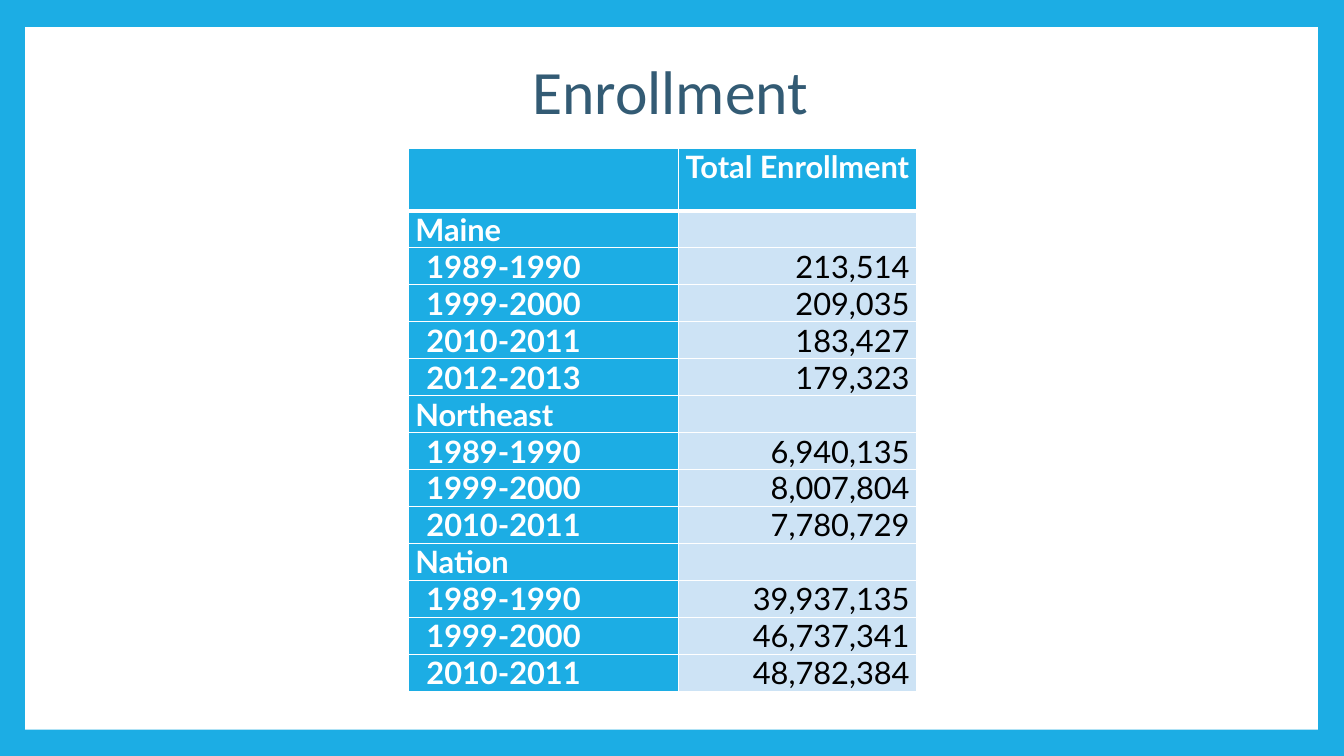
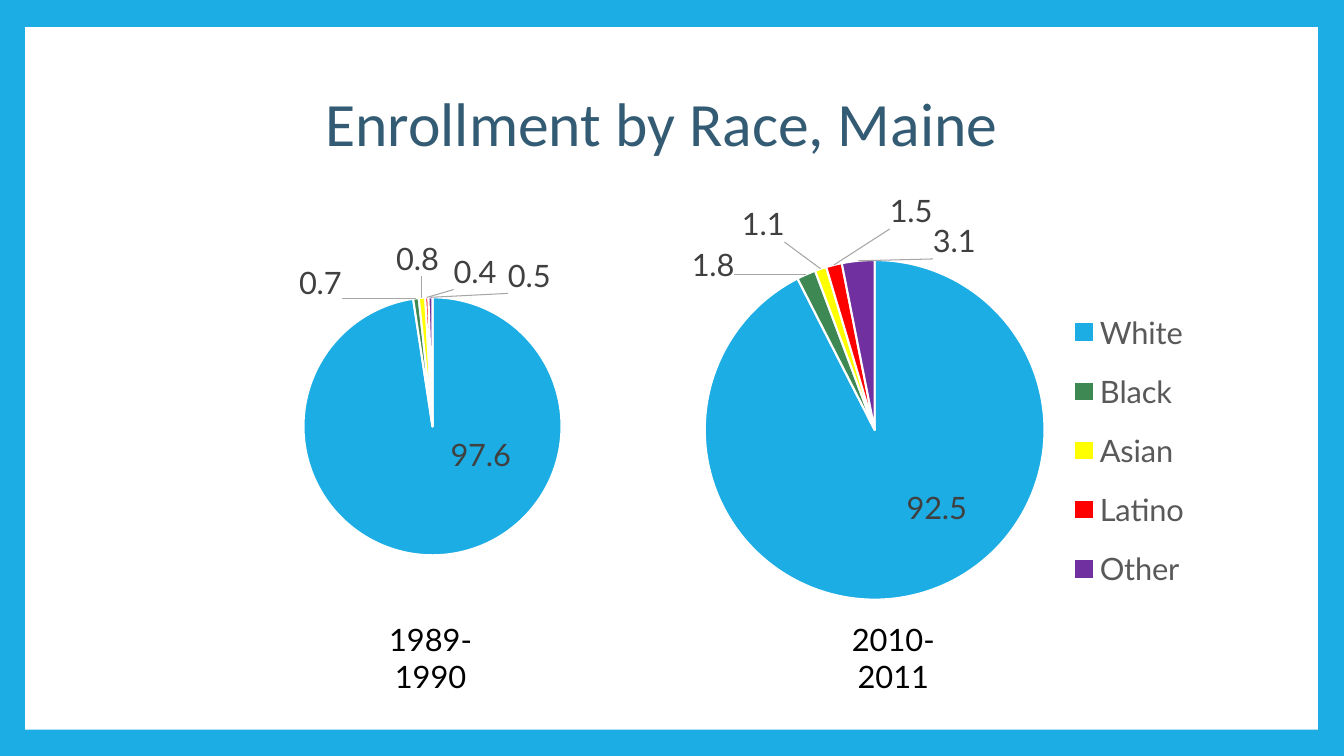
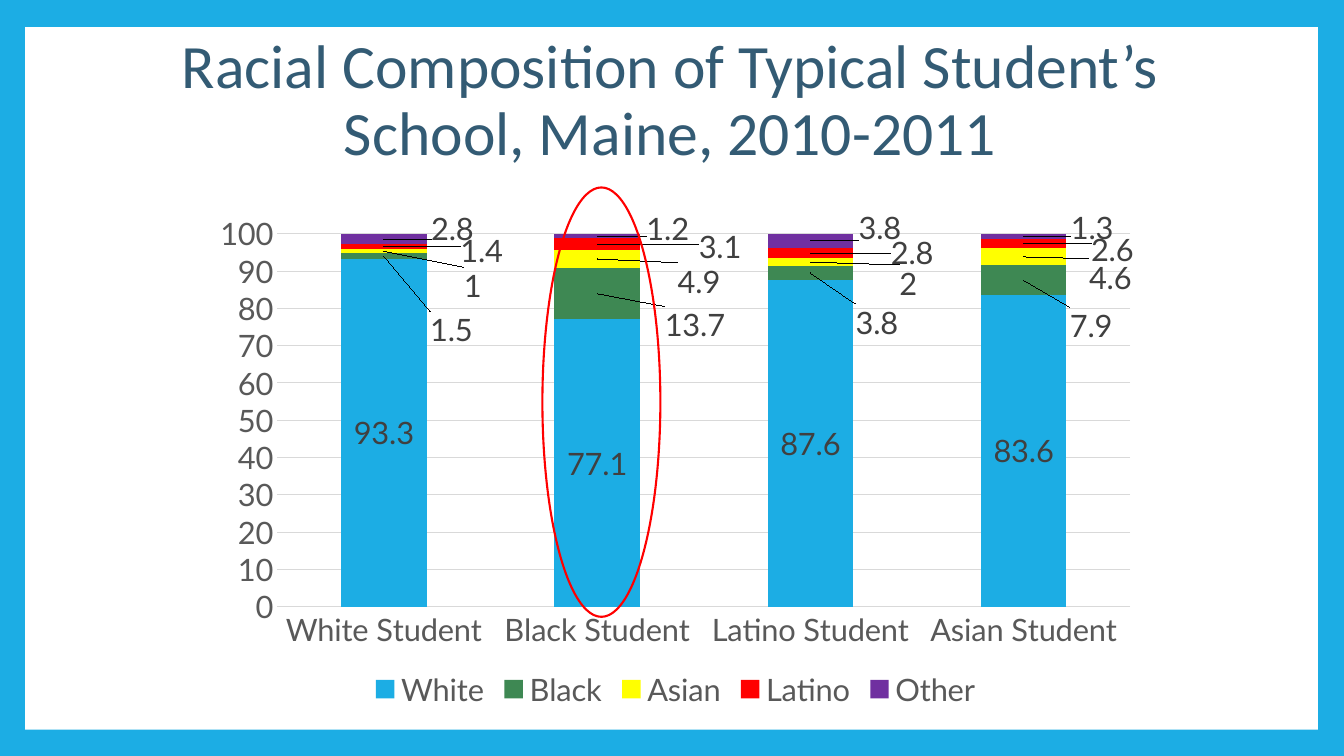
from pptx import Presentation
from pptx.chart.data import CategoryChartData
from pptx.dml.color import RGBColor
from pptx.enum.chart import XL_CHART_TYPE, XL_LABEL_POSITION, XL_LEGEND_POSITION, XL_TICK_MARK
from pptx.enum.shapes import MSO_SHAPE
from pptx.enum.text import MSO_ANCHOR, PP_ALIGN
from pptx.oxml import parse_xml
from pptx.oxml.ns import nsdecls, qn
from pptx.util import Inches, Pt

PIE, STACKED = XL_CHART_TYPE.PIE, XL_CHART_TYPE.COLUMN_STACKED
LABEL_CENTER, LABEL_OUTSIDE = XL_LABEL_POSITION.CENTER, XL_LABEL_POSITION.OUTSIDE_END
LEGEND_RIGHT, LEGEND_BOTTOM = XL_LEGEND_POSITION.RIGHT, XL_LEGEND_POSITION.BOTTOM
NO_TICK = XL_TICK_MARK.NONE
RECTANGLE, OVAL = MSO_SHAPE.RECTANGLE, MSO_SHAPE.OVAL
TOP, MIDDLE, BOTTOM = MSO_ANCHOR.TOP, MSO_ANCHOR.MIDDLE, MSO_ANCHOR.BOTTOM
LEFT, CENTER, RIGHT = PP_ALIGN.LEFT, PP_ALIGN.CENTER, PP_ALIGN.RIGHT

# Shared style
BLUE, PALE, NAVY = "1CADE4", "CDE3F5", "335B74"
WHITE, BLACK, RED = "FFFFFF", "000000", "FF0000"
LABEL_GREY, AXIS_GREY, GRID_GREY, LEADER_GREY = "404040", "595959", "D9D9D9", "A6A6A6"
TITLE_FONT, BODY_FONT, TITLE_SIZE, BODY_SIZE = "Calibri", "Lato", 44, 22
RACE_COLORS = {"White": BLUE, "Black": "3E8853", "Asian": "FFFF00",
               "Latino": RED, "Other": "7030A0"}

# Content
ENROLLMENT = {
    "Maine": [("1989-1990", "213,514"), ("1999-2000", "209,035"),
              ("2010-2011", "183,427"), ("2012-2013", "179,323")],
    "Northeast": [("1989-1990", "6,940,135"), ("1999-2000", "8,007,804"),
                  ("2010-2011", "7,780,729")],
    "Nation": [("1989-1990", "39,937,135"), ("1999-2000", "46,737,341"),
               ("2010-2011", "48,782,384")],
}
STUDENTS = ["White Student", "Black Student", "Latino Student", "Asian Student"]
# Race: values, then how far each label is moved from its usual place, in inches
COMPOSITION = {
    "White": ([93.3, 77.1, 87.6, 83.6], []),
    "Black": ([1.5, 13.7, 3.8, 7.9], [(0.67, 0.73), (0.97, 0.31), (0.66, 0.49), (0.67, 0.45)]),
    "Asian": ([1, 4.9, 2, 4.6], [(0.88, 0.34), (1.01, 0.22), (0.97, 0.21), (0.86, 0.2)]),
    "Latino": ([1.4, 3.1, 2.8, 2.6], [(0.97, 0.04), (1.22, 0.02), (1.01, -0.01), (0.88, 0.06)]),
    "Other": ([2.8, 1.2, 3.8, 1.3], [(0.68, -0.11), (0.7, -0.08), (0.69, -0.13), (0.68, -0.09)]),
}


def color(value):
    return RGBColor.from_string(value)


def inches(*lengths):
    return [Inches(length) for length in lengths]


def set_font(font, size, name, fill, bold=False):
    font.size, font.name, font.bold = Pt(size), name, bold
    font.color.rgb = color(fill)


def set_line(line, fill, width):
    line.color.rgb = color(fill)
    line.width = Pt(width)


# Frame and text
def add_text(page, text, place, size, font, fill, anchor=TOP, spacing=None):
    frame = page.shapes.add_textbox(*inches(*place)).text_frame
    frame.word_wrap = True
    frame.vertical_anchor = anchor
    para = frame.paragraphs[0]
    para.text, para.alignment, para.line_spacing = text, CENTER, spacing
    set_font(para.font, size, font, fill)


def add_page(deck, title, title_place):
    page = deck.slides.add_slide(deck.slide_layouts[6])
    panel = page.shapes.add_shape(RECTANGLE, *inches(0.25, 0.27, 12.82, 6.97))
    panel.shadow.inherit = False
    panel.fill.solid()
    panel.fill.fore_color.rgb = color(WHITE)
    panel.line.fill.background()
    add_text(page, title, title_place, TITLE_SIZE, TITLE_FONT, NAVY, MIDDLE, 0.9)
    return page


# Table
def fill_cell(cell, text, fill, ink, align, anchor, bold, indent=0, top=1, bottom=1):
    cell.margin_left, cell.margin_right = Inches(0.07 + indent), Inches(0.07)
    cell.margin_top = cell.margin_bottom = 0
    cell.vertical_anchor = anchor
    for side, width in zip("LRTB", (1, 1, top, bottom)):
        cell._tc.get_or_add_tcPr().append(parse_xml(
            f'<a:ln{side} {nsdecls("a")} w="{Pt(width)}"><a:solidFill>'
            f'<a:srgbClr val="{WHITE}"/></a:solidFill></a:ln{side}>'))
    cell.fill.solid()
    cell.fill.fore_color.rgb = color(fill)
    para = cell.text_frame.paragraphs[0]
    para.alignment = align
    if text:
        para.text = text
    set_font(para.font, BODY_SIZE, BODY_FONT, ink, bold)


def add_enrollment_table(page, groups):
    rows = []
    for region, years in groups.items():
        rows.append((region, "", 0))
        rows += [(year, total, 0.11) for year, total in years]
    height = 0.62 + 0.32 * len(rows)
    table = page.shapes.add_table(len(rows) + 1, 2, *inches(4.05, 1.47, 5.04, height)).table
    table.columns[0].width, table.columns[1].width = inches(2.68, 2.36)
    table.rows[0].height = Inches(0.62)
    for column, text in enumerate(("", "Total Enrollment")):
        fill_cell(table.cell(0, column), text, BLUE, WHITE, CENTER, TOP, True, bottom=3)
    for number, (name, total, indent) in enumerate(rows, 1):
        table.rows[number].height = Inches(0.32)
        top = 3 if number == 1 else 1
        fill_cell(table.cell(number, 0), name, BLUE, WHITE, LEFT, BOTTOM, True, indent, top)
        fill_cell(table.cell(number, 1), total, PALE, BLACK, RIGHT, MIDDLE, False, 0, top)


# Charts
def add_layout(parent, index, **values):
    """Give a chart part a manual layout; values are fractions of the chart."""
    for old in parent.findall(qn("c:layout")):
        parent.remove(old)
    tags = "".join(f'<c:{tag} val="{value}"/>' for tag, value in values.items())
    parent.insert(index, parse_xml(
        f'<c:layout {nsdecls("c")}><c:manualLayout>{tags}</c:manualLayout></c:layout>'))


def place_part(parent, index, chart_place, part_place, **extra):
    left, top, width, height = chart_place
    x, y, w, h = part_place
    add_layout(parent, index, **extra, xMode="edge", yMode="edge",
               x=(x - left) / width, y=(y - top) / height, w=w / width, h=h / height)


def add_chart(page, kind, place, plot_place, categories, series):
    data = CategoryChartData()
    data.categories = categories
    for name, values in series.items():
        data.add_series(name, values)
    chart = page.shapes.add_chart(kind, *inches(*place), data).chart
    chart.has_title = chart.has_legend = False
    set_font(chart.font, BODY_SIZE, BODY_FONT, BLACK)
    place_part(chart._chartSpace.chart.plotArea, 0, place, plot_place, layoutTarget="inner")
    return chart


def add_legend(chart, position):
    chart.has_legend = True
    chart.legend.position = position
    chart.legend.include_in_layout = False
    set_font(chart.legend.font, BODY_SIZE, BODY_FONT, AXIS_GREY)


def add_labels(series, place, shifts, positions):
    labels = series.data_labels
    labels.show_value = True
    set_font(labels.font, BODY_SIZE, BODY_FONT, LABEL_GREY)
    for index, position in enumerate(positions):
        label = series.points[index].data_label
        set_font(label.font, BODY_SIZE, BODY_FONT, LABEL_GREY)
        label.position = position
    for element, (x, y) in zip(labels._element.findall(qn("c:dLbl")), shifts):
        add_layout(element, 1, x=x / place[2], y=y / place[3])
    return labels


def add_pie(page, place, circle, categories, values, shifts):
    chart = add_chart(page, PIE, place, circle, categories, {"Series 1": values})
    plot = chart.plots[0]
    plot.vary_by_categories = True
    series = plot.series[0]
    for index, fill in enumerate(RACE_COLORS.values()):
        wedge = series.points[index].format
        wedge.fill.solid()
        wedge.fill.fore_color.rgb = color(fill)
        set_line(wedge.line, WHITE, 1.5)
    positions = [LABEL_CENTER] + [LABEL_OUTSIDE] * (len(values) - 1)
    labels = add_labels(series, place, shifts, positions)
    labels._element.append(parse_xml(
        f'<c:leaderLines {nsdecls("c", "a")}><c:spPr><a:ln w="{Pt(0.75)}"><a:solidFill>'
        f'<a:srgbClr val="{LEADER_GREY}"/></a:solidFill></a:ln></c:spPr></c:leaderLines>'))
    return chart


def add_composition_chart(page):
    place = (2, 2.03, 9.4, 5.05)
    chart = add_chart(page, STACKED, place, (2.75, 2.32, 8.46, 3.7), STUDENTS,
                      {race: values for race, (values, _) in COMPOSITION.items()})
    plot = chart.plots[0]
    plot.gap_width, plot.overlap, plot.vary_by_categories = 150, 100, False
    for series in plot.series:
        series.format.fill.solid()
        series.format.fill.fore_color.rgb = color(RACE_COLORS[series.name])
        shifts = COMPOSITION[series.name][1]
        labels = add_labels(series, place, shifts, [LABEL_CENTER] * len(shifts))
        labels.position = LABEL_CENTER
        for leader in labels._element.findall(qn("c:showLeaderLines")):
            labels._element.remove(leader)
    # Axes
    for axis in (chart.category_axis, chart.value_axis):
        axis.major_tick_mark = axis.minor_tick_mark = NO_TICK
        set_font(axis.tick_labels.font, BODY_SIZE, BODY_FONT, AXIS_GREY)
    set_line(chart.category_axis.format.line, GRID_GREY, 0.75)
    scale = chart.value_axis
    scale.minimum_scale, scale.maximum_scale, scale.major_unit = 0, 100, 10
    scale.format.line.fill.background()
    set_line(scale.major_gridlines.format.line, GRID_GREY, 0.75)
    add_legend(chart, LEGEND_BOTTOM)


# Slides
def build_enrollment(deck):
    page = add_page(deck, "Enrollment", (1.25, 0.2, 10.8, 1.48))
    add_enrollment_table(page, ENROLLMENT)


def build_race_pies(deck):
    page = add_page(deck, "Enrollment by Race, Maine", (1, 0.54, 11.13, 1.44))
    add_pie(page, (2.11, 2.38, 4.35, 3.69), (3.01, 2.95, 2.56, 2.56),
            ["1", "2", "3", "4", "5"], [97.6, 0.7, 0.8, 0.4, 0.5],
            [(0.43, -0.36), (-0.73, 0.08), (-0.04, -0.16), (0.48, -0.02), (0.98, 0.02)])
    place = (6.85, 1.61, 5.05, 5.29)
    chart = add_pie(page, place, (6.99, 2.58, 3.37, 3.37),
                    list(RACE_COLORS), [92.5, 1.8, 1.1, 1.5, 3.1],
                    [(0.42, -0.05), (-0.69, 0.14), (-0.34, -0.21), (0.99, -0.3), (1.17, 0.04)])
    add_legend(chart, LEGEND_RIGHT)
    place_part(chart.legend._element, 1, place, (10.6, 2.89, 1.2, 3.16))
    for left, years in ((3.42, "1989-1990"), (8.01, "2010-2011")):
        add_text(page, years, (left, 6.11, 1.7, 0.47), BODY_SIZE, BODY_FONT, BLACK)


def build_composition(deck):
    page = add_page(deck, "Racial Composition of Typical Student’s School, Maine, 2010-2011",
                    (1.25, 0.27, 10.8, 1.48))
    add_composition_chart(page)
    ring = page.shapes.add_shape(OVAL, *inches(5.38, 1.86, 1.17, 4.26))
    ring.shadow.inherit = False
    ring.fill.background()
    set_line(ring.line, RED, 1.5)


def main():
    deck = Presentation()
    deck.slide_width, deck.slide_height = inches(13.33, 7.5)
    backdrop = deck.slide_master.background.fill
    backdrop.solid()
    backdrop.fore_color.rgb = color(BLUE)
    build_enrollment(deck)
    build_race_pies(deck)
    build_composition(deck)
    deck.save("out.pptx")


if __name__ == "__main__":
    main()
